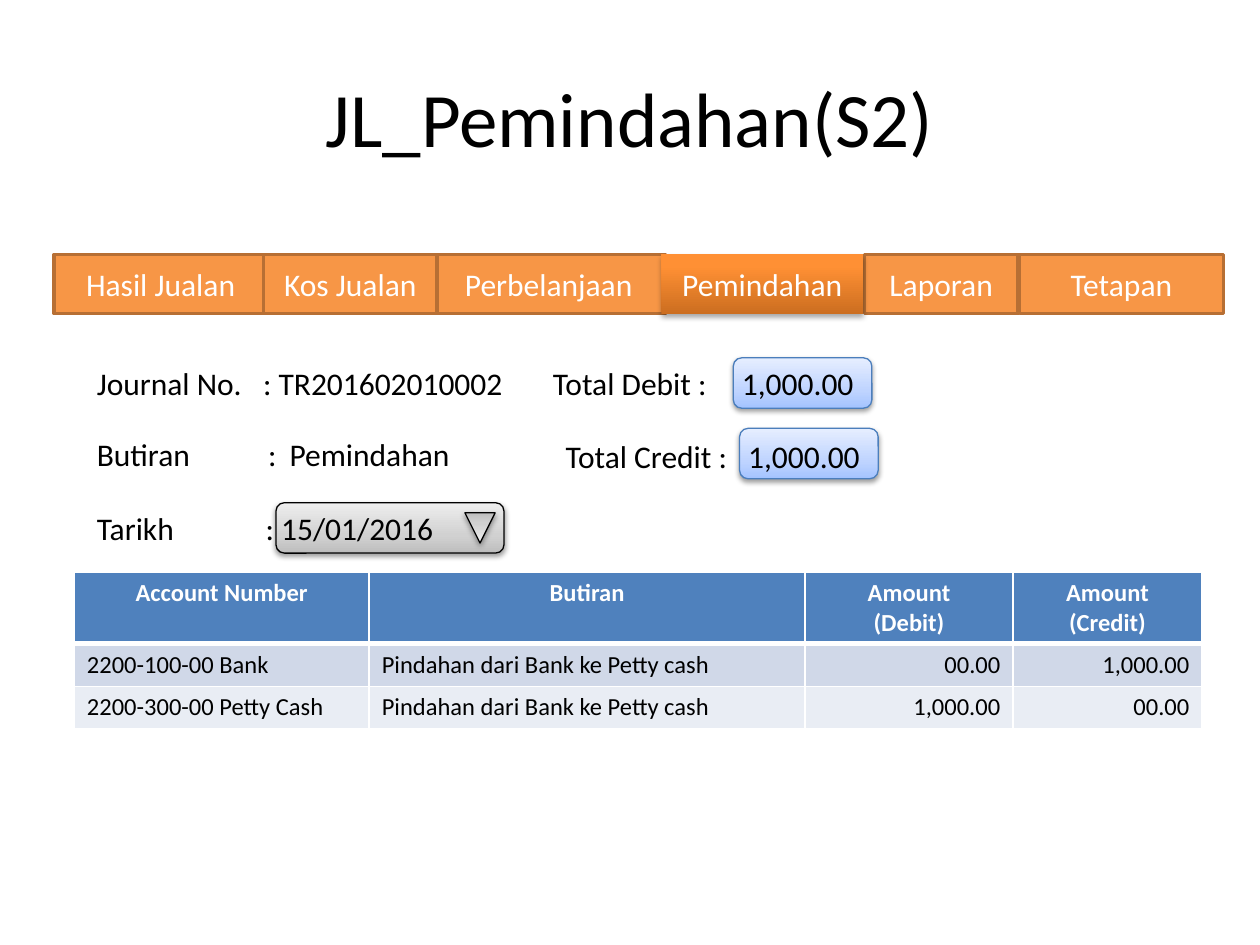
import pptx
import pptx.util
import pptx.oxml
import pptx.oxml.ns
import pptx.dml.color
import pptx.enum.shapes
import pptx.enum.text
from pptx.util import Inches, Pt

RGBColor = pptx.dml.color.RGBColor
MSO_SHAPE = pptx.enum.shapes.MSO_SHAPE
PP_ALIGN = pptx.enum.text.PP_ALIGN
MSO_ANCHOR = pptx.enum.text.MSO_ANCHOR

BLACK = RGBColor(0x00, 0x00, 0x00)
WHITE = RGBColor(0xFF, 0xFF, 0xFF)
ORANGE = RGBColor(0xF7, 0x96, 0x46)
BROWN = RGBColor(0xB7, 0x6F, 0x34)
BLUE = RGBColor(0x4F, 0x81, 0xBD)
BLUE_LINE = RGBColor(0x4B, 0x7E, 0xBC)
BANDS = [RGBColor(0xD0, 0xD8, 0xE8), RGBColor(0xE9, 0xED, 0xF4)]
BLUE_STOPS = [(0, RGBColor(0xA4, 0xC4, 0xFF)), (35, RGBColor(0xBF, 0xD4, 0xFF)),
              (100, RGBColor(0xE6, 0xEE, 0xFF))]
GREY_STOPS = [(0, RGBColor(0xBD, 0xBD, 0xBD)), (35, RGBColor(0xD1, 0xD1, 0xD1)),
              (100, RGBColor(0xEE, 0xEE, 0xEE))]
ORANGE_STOPS = [(0, RGBColor(0xCC, 0x6E, 0x20)), (80, RGBColor(0xFF, 0x90, 0x34)),
                (100, RGBColor(0xFF, 0x91, 0x36))]
NS = pptx.oxml.ns.nsdecls("a")


def write_text(tf, text, size=18, color=BLACK, bold=False, align=PP_ALIGN.LEFT,
               anchor=MSO_ANCHOR.TOP, tabs=()):
    tf.word_wrap = True
    tf.vertical_anchor = anchor
    for i, line in enumerate(text.split("\n")):
        p = tf.paragraphs[0] if i == 0 else tf.add_paragraph()
        p.alignment = align
        if tabs:
            stops = "".join(f'<a:tab pos="{Inches(t)}" algn="l"/>' for t in tabs)
            p._p.get_or_add_pPr().append(
                pptx.oxml.parse_xml(f"<a:tabLst {NS}>{stops}</a:tabLst>"))
        r = p.add_run()
        r.text = line
        r.font.name = "Calibri"
        r.font.size = Pt(size)
        r.font.bold = bold
        r.font.color.rgb = color


def shade(sp, stops, alpha=38, dist=1.6):
    """Give a shape a bottom-to-top gradient and a soft shadow below it."""
    sp.fill.gradient()
    sp.fill.gradient_angle = 90
    gs_list = sp._element.spPr.find(pptx.oxml.ns.qn("a:gradFill")).gsLst
    for gs in list(gs_list):
        gs_list.remove(gs)
    for pos, color in stops:
        gs_list.append(pptx.oxml.parse_xml(
            f'<a:gs {NS} pos="{pos * 1000}"><a:srgbClr val="{color}"/></a:gs>'))
    sp.shadow.inherit = False
    effects = sp._element.spPr.find(pptx.oxml.ns.qn("a:effectLst"))
    effects.append(pptx.oxml.parse_xml(
        f'<a:outerShdw {NS} blurRad="{Pt(3.1)}" dist="{Pt(dist)}" dir="5400000" '
        f'rotWithShape="0"><a:srgbClr val="000000"><a:alpha val="{alpha * 1000}"/>'
        '</a:srgbClr></a:outerShdw>'))


prs = pptx.Presentation()
prs.slide_width = Inches(10)
prs.slide_height = Inches(7.5)
s = prs.slides.add_slide(prs.slide_layouts[6])

# Input fields and the drop-down arrow
ROUND, TRIANGLE = MSO_SHAPE.ROUNDED_RECTANGLE, MSO_SHAPE.ISOSCELES_TRIANGLE
for kind, x, y, w, h, stops, line, turn in [
    (ROUND, 5.82, 2.84, 1.1, 0.4, BLUE_STOPS, BLUE_LINE, 0),
    (ROUND, 5.87, 3.4, 1.1, 0.4, BLUE_STOPS, BLUE_LINE, 0),
    (ROUND, 2.19, 3.99, 1.81, 0.4, GREY_STOPS, BLACK, 0),
    (TRIANGLE, 3.69, 4.07, 0.24, 0.24, GREY_STOPS, BLACK, 180),
]:
    sp = s.shapes.add_shape(kind, Inches(x), Inches(y), Inches(w), Inches(h))
    shade(sp, stops)
    sp.line.color.rgb = line
    sp.line.width = Pt(0.75)
    sp.rotation = turn

# Title
sp = s.shapes.add_textbox(Inches(0.5), Inches(0.3), Inches(9), Inches(1.25))
write_text(sp.text_frame, "JL_Pemindahan(S2)", size=44, align=PP_ALIGN.CENTER,
           anchor=MSO_ANCHOR.MIDDLE)

# Form labels with their values, lined up by tab stops
for text, x, y, w, tabs in [
    ("Journal No.\t: TR201602010002", 0.67, 2.84, 3.46, [1.32]),
    ("Butiran\t:\tPemindahan", 0.67, 3.4, 3.06, [1.36, 1.53]),
    ("Tarikh\t: 15/01/2016", 0.67, 3.99, 2.92, [1.34]),
    ("Total Debit :\t1,000.00", 4.29, 2.84, 2.62, [1.5]),
    ("Total Credit :\t1,000.00", 4.39, 3.42, 3.23, [1.45]),
]:
    sp = s.shapes.add_textbox(Inches(x), Inches(y), Inches(w), Inches(0.4))
    write_text(sp.text_frame, text, tabs=tabs)

# Journal table
rows = [
    ["Account Number", "Butiran", "Amount\n(Debit)", "Amount\n(Credit)"],
    ["2200-100-00 Bank", "Pindahan dari Bank ke Petty cash", "00.00", "1,000.00"],
    ["2200-300-00 Petty Cash", "Pindahan dari Bank ke Petty cash", "1,000.00", "00.00"],
]
table = s.shapes.add_table(3, 4, Inches(0.59), Inches(4.54), Inches(8.95), Inches(1.24)).table
for col, w in zip(table.columns, [2.34, 3.46, 1.65, 1.5]):
    col.width = Inches(w)
for row, h in zip(table.rows, [0.56, 0.34, 0.34]):
    row.height = Inches(h)
for i, row in enumerate(rows):
    header = i == 0
    for j, text in enumerate(row):
        cell = table.cell(i, j)
        if header:
            align = PP_ALIGN.CENTER
        else:
            align = PP_ALIGN.RIGHT if j >= 2 else PP_ALIGN.LEFT
        write_text(cell.text_frame, text, size=14, bold=header, align=align,
                   color=WHITE if header else BLACK)
        tc_pr = cell._tc.get_or_add_tcPr()
        for side in "LRTB":
            thick = (header and side == "B") or (i == 1 and side == "T")
            tc_pr.append(pptx.oxml.parse_xml(
                f'<a:ln{side} {NS} w="{Pt(3 if thick else 1)}"><a:solidFill>'
                f'<a:srgbClr val="{WHITE}"/></a:solidFill></a:ln{side}>'))
        cell.fill.solid()
        cell.fill.fore_color.rgb = BLUE if header else BANDS[i - 1]

# Menu bar, with the current tab raised
menu = s.shapes.add_group_shape()
for text, x, w in [
    ("Hasil Jualan", 0.43, 1.69), ("Perbelanjaan", 3.43, 1.85), ("Laporan", 6.86, 1.22),
    ("Tetapan", 8.09, 1.62), ("Pemindahan", 5.25, 1.6), ("Kos Jualan", 2.09, 1.38),
]:
    sp = menu.shapes.add_shape(MSO_SHAPE.RECTANGLE, Inches(x), Inches(2.02),
                               Inches(w), Inches(0.47))
    if text == "Pemindahan":
        shade(sp, ORANGE_STOPS, alpha=35, dist=1.8)
        sp.line.fill.background()
    else:
        sp.shadow.inherit = False
        sp.fill.solid()
        sp.fill.fore_color.rgb = ORANGE
        sp.line.color.rgb = BROWN
        sp.line.width = Pt(2)
    write_text(sp.text_frame, text, color=WHITE, align=PP_ALIGN.CENTER,
               anchor=MSO_ANCHOR.MIDDLE)

prs.save("out.pptx")
